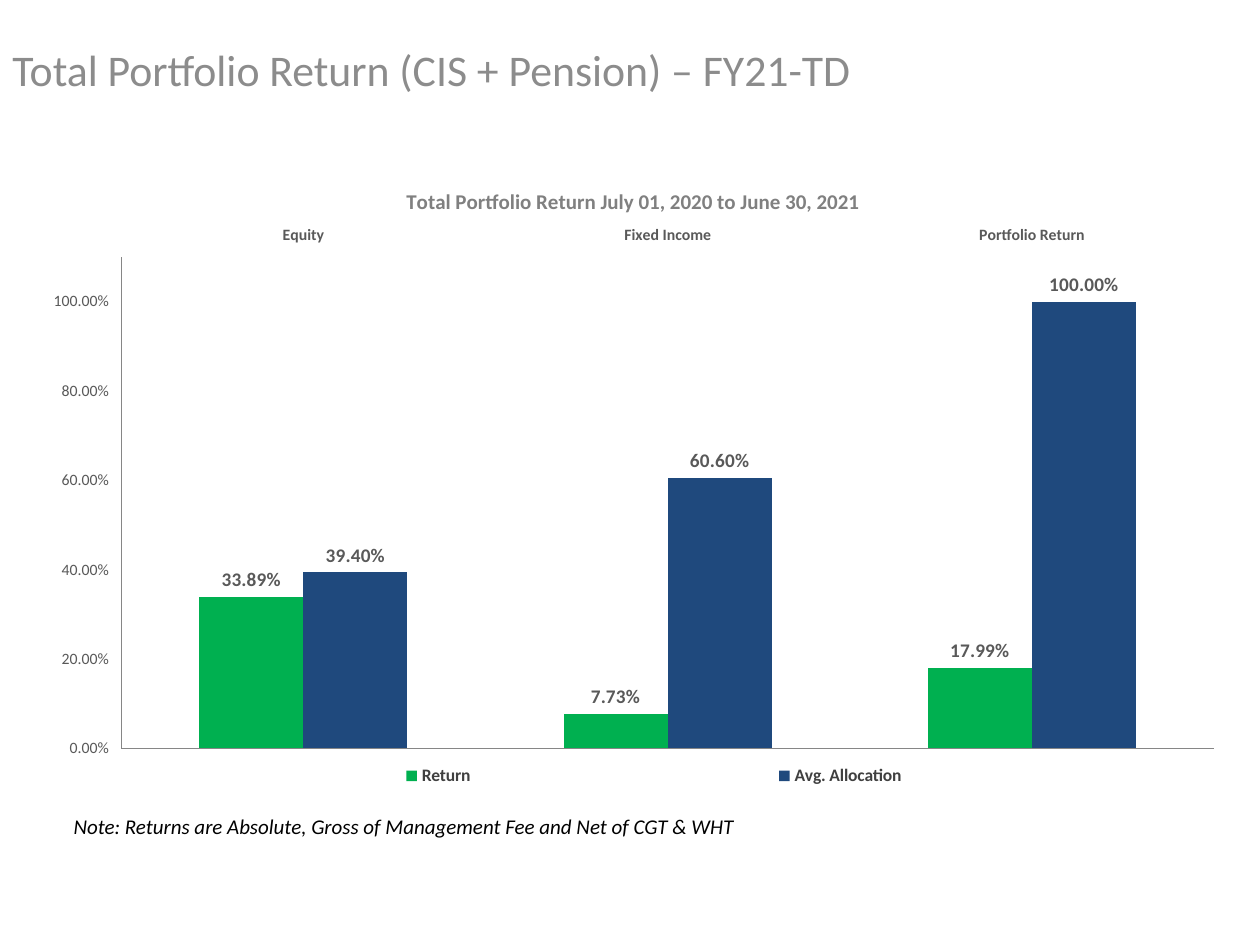
from pptx import Presentation
from pptx.chart.data import CategoryChartData
from pptx.dml.color import RGBColor
from pptx.enum.chart import XL_CHART_TYPE as ChartType
from pptx.enum.chart import XL_LABEL_POSITION as LabelPosition
from pptx.enum.chart import XL_LEGEND_POSITION as LegendPosition
from pptx.enum.chart import XL_TICK_LABEL_POSITION as TickLabels
from pptx.enum.chart import XL_TICK_MARK as TickMark
from pptx.enum.text import MSO_ANCHOR as Anchor
from pptx.oxml import parse_xml
from pptx.oxml.ns import nsdecls
from pptx.util import Pt

FONT = "Calibri"
PERCENT = "0.00%"
COLOURS = {
    "heading": "8C8C8C", "chart title": "808080", "label": "595959",
    "legend": "404040", "axis": "868686", "note": "000000",
    "Return": "00B050", "Avg. Allocation": "1F497D",
}
CATEGORIES = ["Equity", "Fixed Income", "Portfolio Return"]
SERIES = {
    "Return": [0.3389, 0.0773, 0.1799],
    "Avg. Allocation": [0.394, 0.606, 1],
}


def colour(name):
    return RGBColor.from_string(COLOURS[name])


def style(font, size, name, bold=False, italic=False):
    font.name = FONT
    font.size = Pt(size)
    font.bold = bold
    font.italic = italic
    font.color.rgb = colour(name)


def place(element, index, inner=False, **fractions):
    """Give a chart part a manual layout in fractions of the chart area."""
    for layout in element.xpath("c:layout"):
        element.remove(layout)
    target = '<c:layoutTarget val="inner"/>' if inner else ""
    modes = "".join(f'<c:{side}Mode val="edge"/>' for side in "xy")
    values = "".join(f'<c:{key} val="{value}"/>' for key, value in fractions.items())
    element.insert(index, parse_xml(
        f'<c:layout {nsdecls("c")}><c:manualLayout>{target}{modes}{values}'
        "</c:manualLayout></c:layout>"))


def add_heading(page, text):
    box = page.shapes.add_textbox(Pt(0), Pt(18), Pt(720), Pt(43.2))
    frame = box.text_frame
    frame.word_wrap = True
    frame.vertical_anchor = Anchor.MIDDLE
    para = frame.paragraphs[0]
    para.text = text
    style(para.font, 25, "heading")


def add_note(page, text):
    table = page.shapes.add_table(1, 1, Pt(42), Pt(462), Pt(390), Pt(18)).table
    table.first_row = table.horz_banding = False
    cell = table.cell(0, 0)
    cell.fill.background()
    cell.margin_left = cell.margin_right = cell.margin_top = cell.margin_bottom = 0
    cell.vertical_anchor = Anchor.BOTTOM
    para = cell.text_frame.paragraphs[0]
    para.text = text
    style(para.font, 12, "note", italic=True)


def style_axis(axis, bold):
    axis.has_major_gridlines = False
    axis.major_tick_mark = axis.minor_tick_mark = TickMark.NONE
    axis.format.line.color.rgb = colour("axis")
    axis.format.line.width = Pt(0.75)
    style(axis.tick_labels.font, 9, "label", bold=bold)


def style_series(series):
    series.format.fill.solid()
    series.format.fill.fore_color.rgb = colour(series.name)
    series.invert_if_negative = False
    labels = series.data_labels
    labels.show_value = True
    labels.number_format = PERCENT
    labels.number_format_is_linked = False
    labels.position = LabelPosition.OUTSIDE_END
    style(labels.font, 11, "label", bold=True)


def add_return_chart(page, title):
    data = CategoryChartData(number_format=PERCENT)
    data.categories = CATEGORIES
    for name, values in SERIES.items():
        data.add_series(name, values)
    chart = page.shapes.add_chart(
        ChartType.COLUMN_CLUSTERED, Pt(18), Pt(90), Pt(684), Pt(372), data).chart
    chart.font.name = "Manrope"
    chart.font.size = Pt(10)

    para = chart.chart_title.text_frame.paragraphs[0]
    para.text = title
    style(para.font, 12, "chart title", bold=True)
    place(chart.chart_title._element, 1, x=0.31, y=0.04)

    style_axis(chart.category_axis, bold=True)
    chart.category_axis.tick_label_position = TickLabels.HIGH
    scale = chart.value_axis
    style_axis(scale, bold=False)
    scale.tick_label_position = TickLabels.LOW
    scale.minimum_scale, scale.maximum_scale, scale.major_unit = 0, 1.1, 0.2
    scale.tick_labels.number_format = PERCENT
    scale.tick_labels.number_format_is_linked = False

    plot = chart.plots[0]
    plot.gap_width = 150
    plot.overlap = 0
    plot.vary_by_categories = False
    for series in plot.series:
        style_series(series)
    place(chart._chartSpace.chart.plotArea, 0, inner=True,
          x=0.075, y=0.153, w=0.913, h=0.755)

    chart.has_legend = True
    legend = chart.legend
    legend.position = LegendPosition.BOTTOM
    legend.include_in_layout = False
    style(legend.font, 10, "legend", bold=True)
    place(legend._element, 1, x=0.06, y=0.93, w=0.92, h=0.04)


def main():
    deck = Presentation()
    deck.slide_width, deck.slide_height = Pt(720), Pt(540)
    page = deck.slides.add_slide(deck.slide_layouts[6])
    add_heading(page, "Total Portfolio Return (CIS + Pension) – FY21-TD")
    add_note(page, "Note: Returns are Absolute, Gross of Management Fee and Net of CGT & WHT")
    add_return_chart(page, "Total Portfolio Return July 01, 2020 to June 30, 2021")
    deck.save("out.pptx")


if __name__ == "__main__":
    main()
